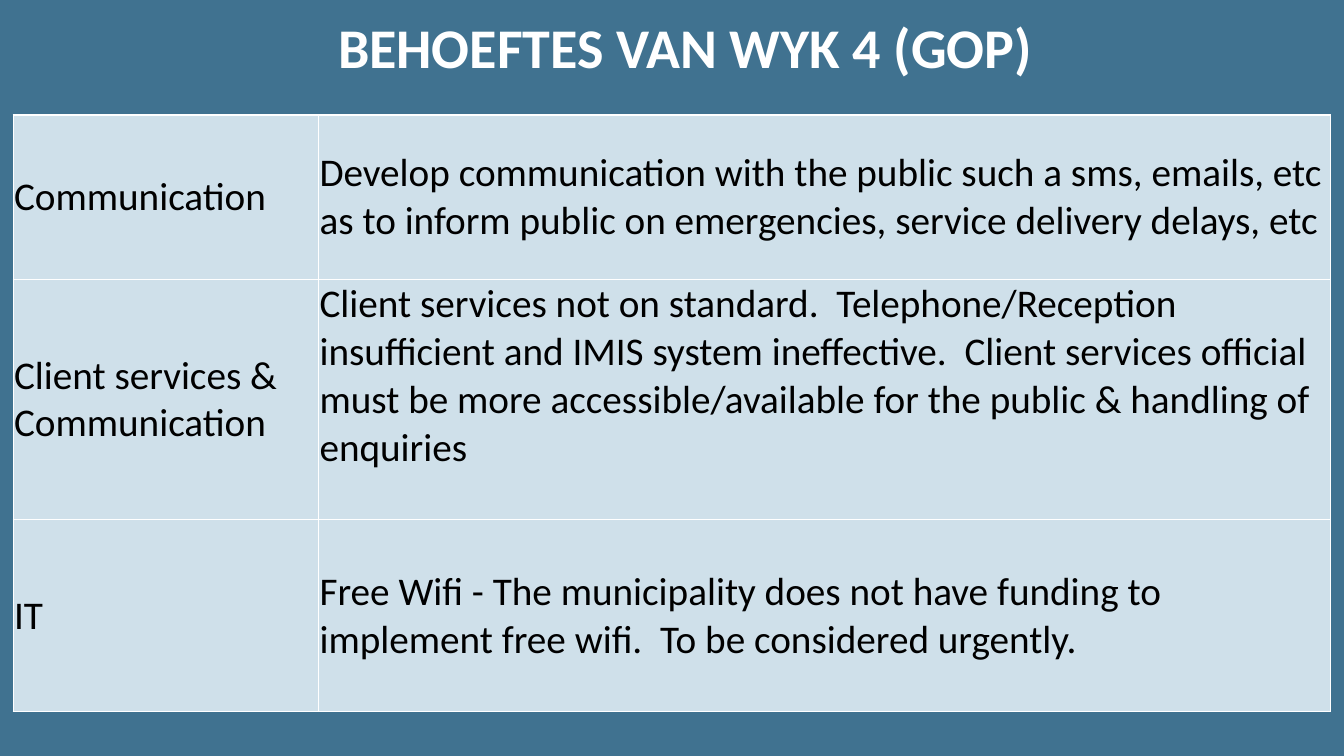
from lxml import etree
from pptx import Presentation
from pptx.dml.color import RGBColor
from pptx.enum.text import MSO_ANCHOR, PP_ALIGN
from pptx.oxml.ns import qn
from pptx.util import Inches, Pt

TOP, MIDDLE = MSO_ANCHOR.TOP, MSO_ANCHOR.MIDDLE
CENTER = PP_ALIGN.CENTER
BLUE = RGBColor(0x40, 0x72, 0x90)
PALE = RGBColor(0xCF, 0xE0, 0xEA)
WHITE = RGBColor(0xFF, 0xFF, 0xFF)
BLACK = RGBColor(0, 0, 0)

TITLE_FORMAT = {"name": "Calibri", "size": Pt(40), "bold": True}
CELL_FORMAT = {"name": "Calibri", "size": Pt(28), "bold": False}
COLUMN_WIDTHS = (3.03, 10.04)
NEEDS = [
    (1.63, MIDDLE, "Communication",
     "Develop communication with the public such a sms, emails, etc as to "
     "inform public on emergencies, service delivery delays, etc"),
    (2.38, TOP, "Client services & Communication",
     "Client services not on standard.  Telephone/Reception insufficient and "
     "IMIS system ineffective.  Client services official must be more "
     "accessible/available for the public & handling of enquiries"),
    (1.91, MIDDLE, "IT",
     "Free Wifi - The municipality does not have funding to implement free "
     "wifi.  To be considered urgently."),
]


def write(p, text, formats, color):
    """Add a formatted run to a paragraph."""
    r = p.add_run()
    r.text = text
    for name, value in formats.items():
        setattr(r.font, name, value)
    r.font.color.rgb = color


def add_borders(cell):
    """Draw a thin white line on every side of a cell."""
    tc_pr = cell._tc.get_or_add_tcPr()
    for i, side in enumerate(("a:lnL", "a:lnR", "a:lnT", "a:lnB")):
        line = etree.Element(qn(side), w=str(Pt(1)))
        fill = etree.SubElement(line, qn("a:solidFill"))
        etree.SubElement(fill, qn("a:srgbClr"), val=str(WHITE))
        tc_pr.insert(i, line)


def add_title(s, left, top, width, height):
    """Place the centred slide title."""
    box = s.shapes.add_textbox(Inches(left), Inches(top),
                               Inches(width), Inches(height))
    tf = box.text_frame
    tf.word_wrap = True
    tf.vertical_anchor = MIDDLE
    tf.margin_top = tf.margin_bottom = 0
    p = tf.paragraphs[0]
    p.alignment = CENTER
    write(p, "BEHOEFTES VAN WYK 4 (GOP)", TITLE_FORMAT, WHITE)


def fill_cell(cell, text, anchor):
    """Write one table cell with its fill, margins and borders."""
    cell.fill.solid()
    cell.fill.fore_color.rgb = PALE
    cell.vertical_anchor = anchor
    cell.margin_left = cell.margin_right = cell.margin_top = Inches(0.01)
    cell.margin_bottom = 0
    write(cell.text_frame.paragraphs[0], text, CELL_FORMAT, BLACK)
    add_borders(cell)


def add_needs_table(s, left, top):
    """Place the table of ward needs."""
    frame = s.shapes.add_table(
        len(NEEDS), len(COLUMN_WIDTHS), Inches(left), Inches(top),
        Inches(sum(COLUMN_WIDTHS)), Inches(sum(need[0] for need in NEEDS)))
    table = frame.table
    table.first_row = table.horz_banding = False
    for column, width in zip(table.columns, COLUMN_WIDTHS):
        column.width = Inches(width)
    for row, (height, anchor, topic, need) in zip(table.rows, NEEDS):
        row.height = Inches(height)
        fill_cell(row.cells[0], topic, MIDDLE)
        fill_cell(row.cells[1], need, anchor)


def main():
    """Build and save the slide."""
    prs = Presentation()
    prs.slide_width, prs.slide_height = Inches(13.33), Inches(7.5)
    s = prs.slides.add_slide(prs.slide_layouts[6])
    s.background.fill.solid()
    s.background.fill.fore_color.rgb = BLUE
    add_title(s, 0.26, 0.08, 13.07, 0.76)
    add_needs_table(s, 0.13, 1.14)
    prs.save("out.pptx")


if __name__ == "__main__":
    main()
